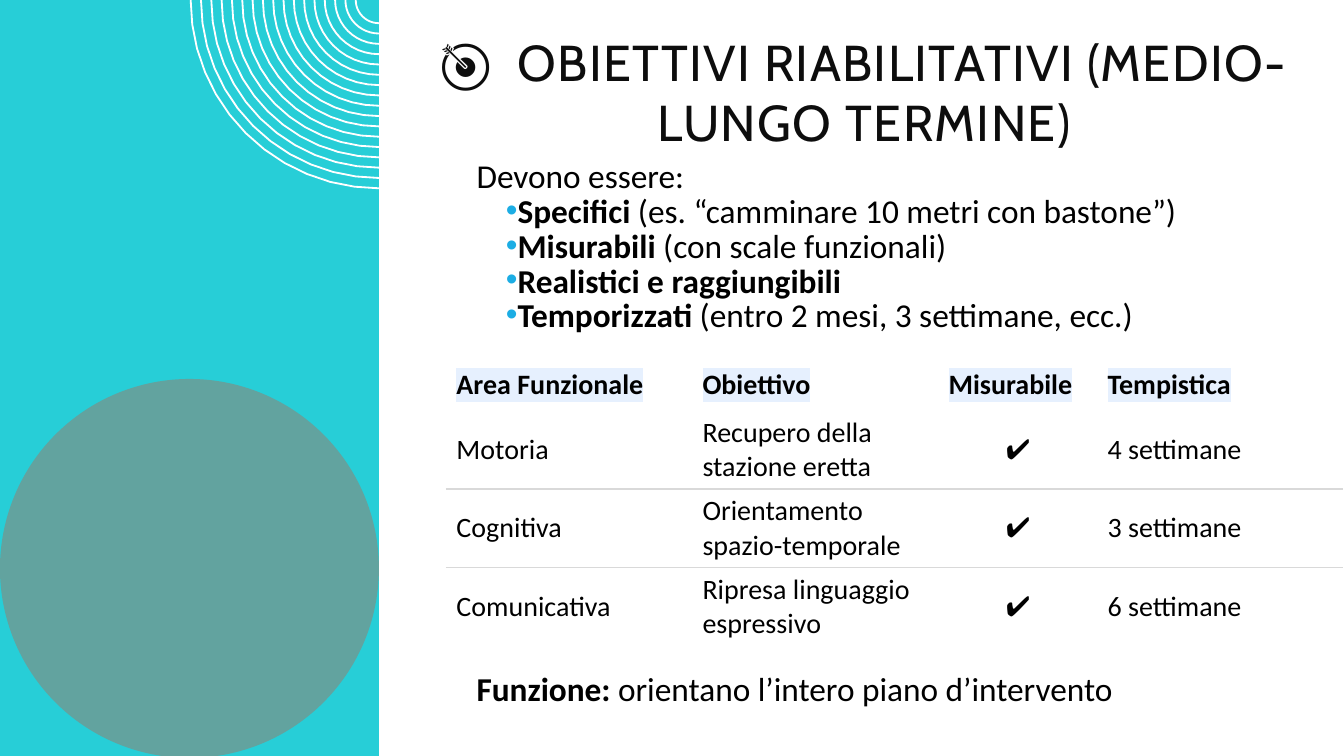
import math

import lxml.etree
import pptx
import pptx.dml.color
import pptx.enum.shapes
import pptx.enum.text
import pptx.oxml.ns
import pptx.util

Cm = pptx.util.Cm
Pt = pptx.util.Pt
RGBColor = pptx.dml.color.RGBColor
qn = pptx.oxml.ns.qn
SHAPES = pptx.enum.shapes.MSO_SHAPE
ALIGN = pptx.enum.text.PP_ALIGN
ANCHOR = pptx.enum.text.MSO_ANCHOR

TURQUOISE = RGBColor(0x27, 0xCE, 0xD7)
SAGE = RGBColor(0x62, 0xA3, 0x9F)
WHITE = RGBColor(0xFF, 0xFF, 0xFF)
BLACK = RGBColor(0x00, 0x00, 0x00)
INK = RGBColor(0x0D, 0x0D, 0x0D)
BULLET_BLUE = RGBColor(0x1C, 0xAD, 0xE4)
HIGHLIGHT = RGBColor(0xE6, 0xF0, 0xFE)
RULE_GREY = RGBColor(0xD9, 0xD9, 0xD9)

TITLE = "🎯  OBIETTIVI RIABILITATIVI (MEDIO-LUNGO TERMINE)"
CRITERIA = [
    ("Specifici", " (es. “camminare 10 metri con bastone”)"),
    ("Misurabili", " (con scale funzionali)"),
    ("Realistici e raggiungibili", ""),
    ("Temporizzati", " (entro 2 mesi, 3 settimane, ecc.)"),
]
GOALS = [
    ("Area Funzionale", "Obiettivo", "Misurabile", "Tempistica"),
    ("Motoria", "Recupero della stazione eretta", "✔️", "4 settimane"),
    ("Cognitiva", "Orientamento spazio-temporale", "✔️", "3 settimane"),
    ("Comunicativa", "Ripresa linguaggio espressivo", "✔️", "6 settimane"),
]


def add_color(parent, tag, color):
    """Append an element that holds one RGB colour."""
    element = lxml.etree.SubElement(parent, qn(tag))
    lxml.etree.SubElement(element, qn("a:srgbClr"), val=str(color))
    return element


def set_font(font, size, color, name):
    """Apply size, colour and typeface."""
    font.size = Pt(size)
    font.color.rgb = color
    font.name = name


def paint(shape, color):
    """Give a shape a flat fill without outline or shadow."""
    shape.shadow.inherit = False
    shape.fill.solid()
    shape.fill.fore_color.rgb = color
    shape.line.fill.background()


def place(shape, left, top, width, height):
    """Move a placeholder and set its text margins."""
    shape.left, shape.top, shape.width, shape.height = left, top, width, height
    frame = shape.text_frame
    frame.margin_left = frame.margin_right = Cm(0.25)
    frame.margin_top = frame.margin_bottom = 0
    frame.word_wrap = True
    frame.auto_size = pptx.enum.text.MSO_AUTO_SIZE.NONE
    return frame


def add_rings(slide, center_x, center_y, radius, count=17):
    """Draw concentric quarter rings as one stroked outline."""
    step, segments = Cm(0.26), 12
    angles = [math.pi / 2 * (1 + index / segments) for index in range(segments + 1)]
    builder = slide.shapes.build_freeform(center_x, center_y + radius)
    for ring in range(count):
        size = radius - ring * step
        points = [
            (center_x + size * math.cos(angle), center_y + size * math.sin(angle))
            for angle in angles
        ]
        if ring:
            builder.move_to(*points[0])
        builder.add_line_segments(points[1:], close=False)
    rings = builder.convert_to_shape()
    rings.shadow.inherit = False
    rings.fill.background()
    rings.line.color.rgb = WHITE
    rings.line.width = Pt(1.3)


def add_side_panel(slide, left, top, width, height):
    """Draw the coloured panel with its rings and disc."""
    panel = slide.shapes.add_shape(SHAPES.RECTANGLE, left, top, width, height)
    paint(panel, TURQUOISE)
    add_rings(slide, left + width, top, width // 2 - Cm(0.03))
    disc = slide.shapes.add_shape(SHAPES.OVAL, left, top + width, width, width)
    paint(disc, SAGE)


def fill_title(slide, left, top, width, height):
    """Write the spaced, centred title."""
    frame = place(slide.shapes.title, left, top, width, height)
    frame.vertical_anchor = ANCHOR.MIDDLE
    paragraph = frame.paragraphs[0]
    run = paragraph.add_run()
    run.text = TITLE
    run.font._element.set("spc", "100")
    paragraph.alignment = ALIGN.CENTER
    set_font(paragraph.font, 36, INK, "Cabin")


def add_body_paragraph(paragraph, bold, plain, bulleted=False, space_before=0):
    """Write a bold lead and plain text, with or without a bullet."""
    paragraph.line_spacing = 0.8
    paragraph.space_before = Pt(space_before)
    paragraph.space_after = Pt(2)
    properties = paragraph._element.get_or_add_pPr()
    properties.set("marL", "0")
    properties.set("indent", str(Cm(0.74) if bulleted else 0))
    if bulleted:
        add_color(properties, "a:buClr", BULLET_BLUE)
        lxml.etree.SubElement(properties, qn("a:buFont"), typeface="Arial")
        lxml.etree.SubElement(properties, qn("a:buChar"), char="•")
    else:
        lxml.etree.SubElement(properties, qn("a:buNone"))
    set_font(paragraph.font, 23.8, BLACK, "Calibri")
    for text, weight in ((bold, True), (plain, False)):
        if text:
            run = paragraph.add_run()
            run.text = text
            run.font.bold = weight


def fill_body(slide, left, top, width, height):
    """Write the criteria above the table and the purpose below it."""
    frame = place(slide.placeholders[1], left, top, width, height)
    frame.vertical_anchor = ANCHOR.TOP
    add_body_paragraph(frame.paragraphs[0], "", "Devono essere:")
    for bold, plain in CRITERIA:
        add_body_paragraph(frame.add_paragraph(), bold, plain, bulleted=True)
    add_body_paragraph(frame.add_paragraph(), "Funzione:",
                       " orientano l’intero piano d’intervento", space_before=242)


def add_border(cell, tag):
    """Draw one grey cell border."""
    line = lxml.etree.Element(qn(tag), w=str(Pt(1)))
    add_color(line, "a:solidFill", RULE_GREY)
    cell._tc.get_or_add_tcPr().insert(0, line)


def fill_cell(cell, text, row, column):
    """Write and format one cell of the goals table."""
    cell.fill.background()
    cell.vertical_anchor = ANCHOR.MIDDLE
    paragraph = cell.text_frame.paragraphs[0]
    run = paragraph.add_run()
    run.text = text
    set_font(paragraph.font, 20, BLACK, "Calibri")
    paragraph.font.bold = row == 0
    if row == 0:
        add_color(run.font._element, "a:highlight", HIGHLIGHT)
    elif column == 2:
        paragraph.alignment = ALIGN.CENTER
    if 0 < row < len(GOALS) - 1:
        add_border(cell, "a:lnB")
    if row > 1:
        add_border(cell, "a:lnT")


def add_goals_table(slide, left, top, width, height):
    """Build the table of goals by functional area."""
    frame = slide.shapes.add_table(len(GOALS), len(GOALS[0]), left, top, width, height)
    table = frame.table
    table.first_row = table.horz_banding = False
    for column, size in zip(table.columns, (6.2, 6.2, 4.01, 6.17)):
        column.width = Cm(size)
    header_height = Cm(1.27)
    for index, row in enumerate(table.rows):
        row.height = (height - header_height) // (len(GOALS) - 1) if index else header_height
    for row, texts in enumerate(GOALS):
        for column, text in enumerate(texts):
            fill_cell(table.cell(row, column), text, row, column)


def main():
    """Build and save the presentation."""
    presentation = pptx.Presentation()
    presentation.slide_width = Cm(33.87)
    presentation.slide_height = Cm(19.05)
    slide = presentation.slides.add_slide(presentation.slide_layouts[1])
    add_side_panel(slide, 0, 0, Cm(9.55), presentation.slide_height)
    fill_title(slide, Cm(9.98), Cm(0.97), Cm(23.6), Cm(2.67))
    fill_body(slide, Cm(11.76), Cm(4.11), Cm(20.8), Cm(13.97))
    add_goals_table(slide, Cm(11.25), Cm(9.07), Cm(22.58), Cm(6.76))
    presentation.save("out.pptx")


if __name__ == "__main__":
    main()
